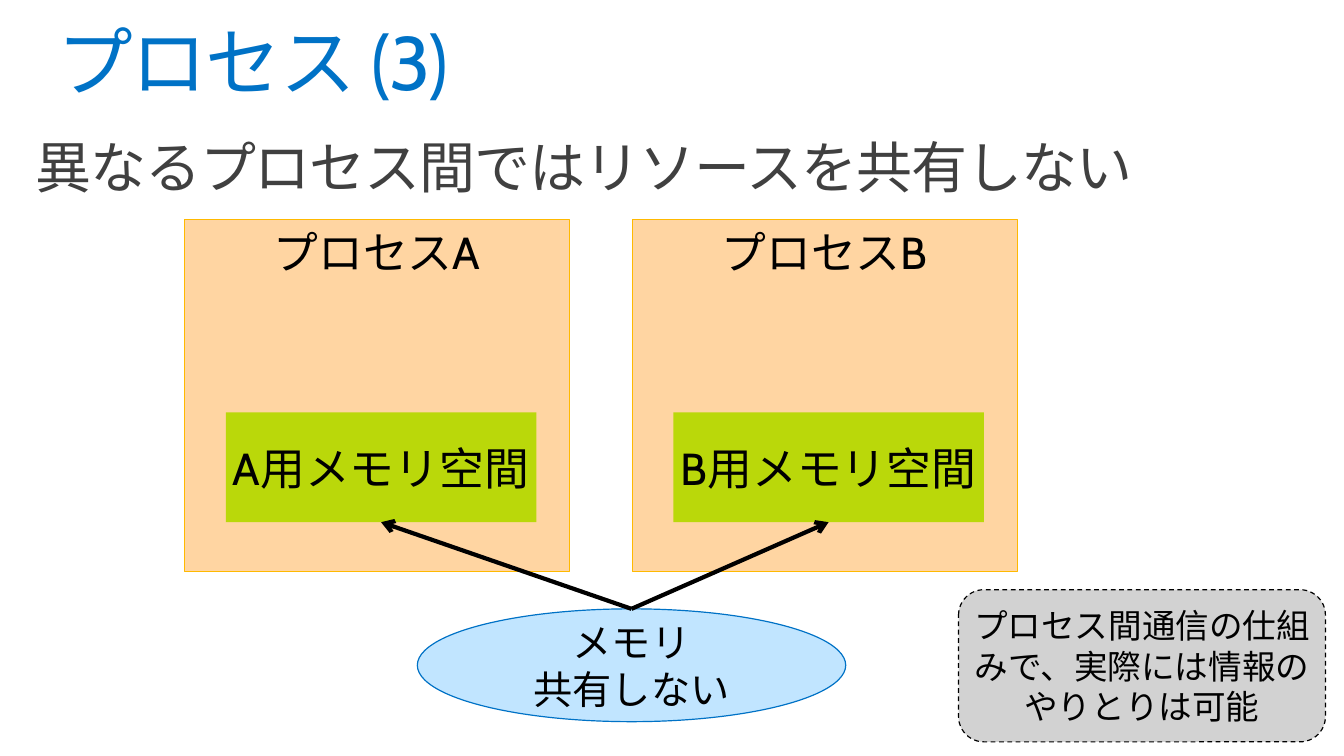
from lxml.etree import SubElement
from pptx import Presentation
from pptx.dml.color import RGBColor
from pptx.enum.dml import MSO_LINE
from pptx.enum.shapes import MSO_CONNECTOR, MSO_SHAPE
from pptx.enum.text import MSO_ANCHOR, PP_ALIGN
from pptx.oxml.ns import qn
from pptx.util import Pt

FONT = "Cabin"
HEADINGS = [
    {"text": "プロセス (3)", "box": (41, 18, 878, 59), "size": 54,
     "color": "0072C6", "tracking": -100, "before": 0},
    {"text": "異なるプロセス間ではリソースを共有しない", "box": (25.2, 100, 878, 72), "size": 40,
     "color": "404040", "tracking": -70, "before": 24},
]
PROCESSES = ["A", "B"]
PROCESS_BOX = (131.8, 157, 275, 251.3)
PROCESS_STEP = 319.7
MEMORY_OFFSET = (29.5, 137.5)
MEMORY_SIZE = (221.8, 78.5)
PROCESS_STYLE = {"fill": "FFD5A2", "line": "FFB900", "width": 0.75, "size": 32,
                 "anchor": MSO_ANCHOR.TOP}
MEMORY_STYLE = {"fill": "BAD80A", "size": 32}
SHARING = {"lines": ["メモリ", "共有しない"], "box": (298.1, 434.9, 306, 80.6),
           "style": {"fill": "C1E5FF", "line": "0072C6", "width": 0.85, "size": 28}}
NOTE = {"lines": ["プロセス間通信の仕組みで、実際には情報のやりとりは可能"],
        "box": (684.7, 421.2, 262.1, 108.7),
        "style": {"fill": "D2D2D2", "line": "000000", "width": 0.85, "size": 24,
                  "dash": MSO_LINE.DASH}}


def paint(target, color):
    target.rgb = RGBColor.from_string(color)


def apply(target, values):
    for name, value in values.items():
        setattr(target, name, value)


def set_frame(frame, inset, anchor):
    apply(frame, {"word_wrap": True, "vertical_anchor": anchor,
                  "margin_left": Pt(inset), "margin_right": Pt(inset),
                  "margin_top": Pt(inset), "margin_bottom": Pt(inset)})


def add_span(para, text, size, color):
    span = para.add_run()
    span.text = text
    apply(span.font, {"name": FONT, "size": Pt(size)})
    paint(span.font.color, color)
    return span


def add_heading(page, heading):
    box = page.shapes.add_textbox(*map(Pt, heading["box"]))
    set_frame(box.text_frame, 0, MSO_ANCHOR.TOP)
    para = box.text_frame.paragraphs[0]
    apply(para, {"line_spacing": 0.9, "space_before": Pt(heading["before"])})
    span = add_span(para, heading["text"], heading["size"], heading["color"])
    span.font._element.set("spc", str(heading["tracking"]))


def add_block(page, kind, box, lines, style):
    shape = page.shapes.add_shape(kind, *map(Pt, box))
    shape.shadow.inherit = False
    shape.fill.solid()
    paint(shape.fill.fore_color, style["fill"])
    if "line" in style:
        paint(shape.line.color, style["line"])
        apply(shape.line, {"width": Pt(style["width"]), "dash_style": style.get("dash")})
    else:
        shape.line.fill.background()
    frame = shape.text_frame
    set_frame(frame, 3.6, style.get("anchor", MSO_ANCHOR.MIDDLE))
    for index, text in enumerate(lines):
        para = frame.add_paragraph() if index else frame.paragraphs[0]
        para.alignment = PP_ALIGN.CENTER
        add_span(para, text, style["size"], "000000")
    return shape


def add_arrow(page, source, target):
    arrow = page.shapes.add_connector(MSO_CONNECTOR.STRAIGHT, 0, 0, 0, 0)
    arrow.begin_connect(source, 0)
    arrow.end_connect(target, 2)
    paint(arrow.line.color, "000000")
    arrow.line.width = Pt(3)
    SubElement(arrow.line._get_or_add_ln(), qn("a:tailEnd"), type="arrow")
    SubElement(arrow._element.spPr, qn("a:effectLst"))


def main():
    deck = Presentation()
    apply(deck, {"slide_width": Pt(960), "slide_height": Pt(540)})
    page = deck.slides.add_slide(deck.slide_layouts[6])
    for heading in HEADINGS:
        add_heading(page, heading)
    sharing = add_block(page, MSO_SHAPE.OVAL, SHARING["box"], SHARING["lines"], SHARING["style"])
    memories = []
    left, top, width, height = PROCESS_BOX
    for index, name in enumerate(PROCESSES):
        x = left + index * PROCESS_STEP
        add_block(page, MSO_SHAPE.RECTANGLE, (x, top, width, height),
                  [f"プロセス{name}"], PROCESS_STYLE)
        memory_box = (x + MEMORY_OFFSET[0], top + MEMORY_OFFSET[1], *MEMORY_SIZE)
        memories.append(add_block(page, MSO_SHAPE.RECTANGLE, memory_box,
                                  [f"{name}用メモリ空間"], MEMORY_STYLE))
    for memory in memories:
        add_arrow(page, sharing, memory)
    add_block(page, MSO_SHAPE.ROUNDED_RECTANGLE, NOTE["box"], NOTE["lines"], NOTE["style"])
    deck.save("out.pptx")


if __name__ == "__main__":
    main()
